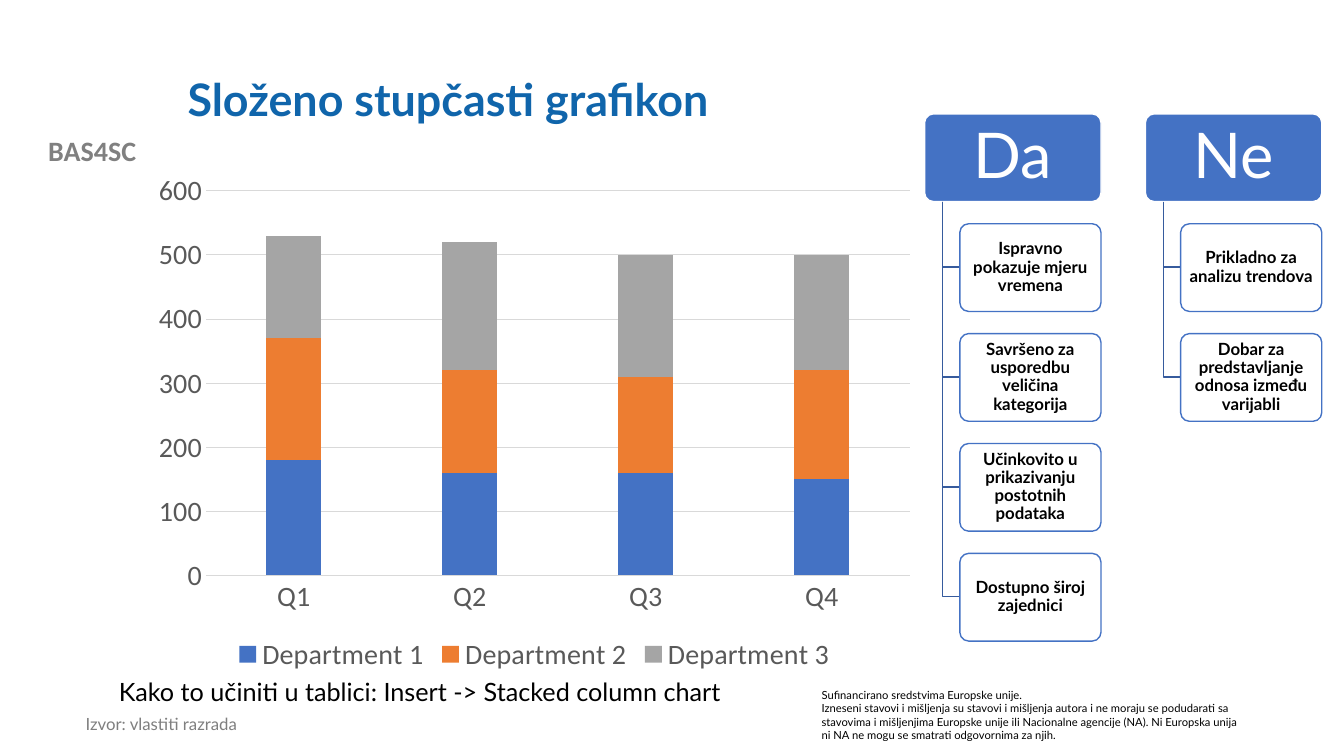
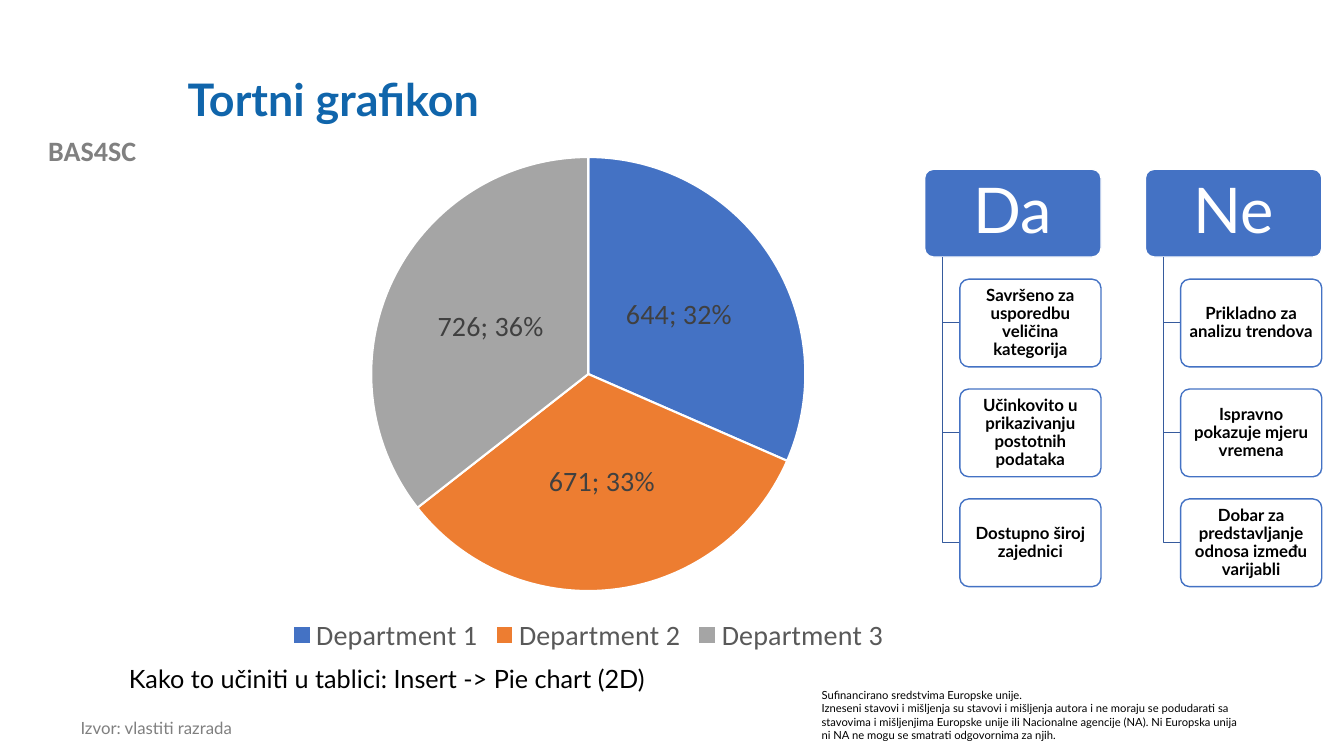
"""Build two slides on stacked column and pie charts, each with a yes/no tree."""
from dataclasses import dataclass

from lxml import etree
from pptx import Presentation
from pptx.chart.data import CategoryChartData
from pptx.dml.color import RGBColor
from pptx.enum.chart import XL_CHART_TYPE as ChartType
from pptx.enum.chart import XL_LABEL_POSITION as LabelPosition
from pptx.enum.chart import XL_LEGEND_POSITION as LegendPosition
from pptx.enum.chart import XL_TICK_MARK as TickMark
from pptx.enum.shapes import MSO_SHAPE as Shape
from pptx.enum.text import MSO_ANCHOR as Anchor
from pptx.enum.text import PP_ALIGN as Align
from pptx.oxml.ns import qn
from pptx.util import Inches, Pt


@dataclass(frozen=True)
class Theme:
    heading: str = "Lato"
    chart_face: str = "Calibri"
    title: str = "1065AB"
    project: str = "808080"
    source: str = "7F7F7F"
    text: str = "000000"
    paper: str = "FFFFFF"
    accent: str = "4472C4"
    branch: str = "365B9D"
    grid: str = "D9D9D9"
    axis_text: str = "595959"
    label_text: str = "404040"
    series: tuple = ("4472C4", "ED7D31", "A5A5A5")
    title_size: int = 32
    header_size: int = 45
    chart_size: int = 20
    note_size: int = 18
    card_size: int = 12
    legal_size: int = 8


THEME = Theme()
DEPARTMENTS = ("Department 1", "Department 2", "Department 3")
TREND = "Prikladno za analizu trendova"
TIME = "Ispravno pokazuje mjeru vremena"
SIZES = "Savršeno za usporedbu veličina kategorija"
PERCENT = "Učinkovito u prikazivanju postotnih podataka"
AUDIENCE = "Dostupno široj zajednici"
RELATION = "Dobar za predstavljanje odnosa između varijabli"
LEGAL = (
    "Sufinancirano sredstvima Europske unije.",
    "Izneseni stavovi i mišljenja su stavovi i mišljenja autora i ne moraju se "
    "podudarati sa stavovima i mišljenjima Europske unije ili Nacionalne agencije "
    "(NA). Ni Europska unija ni NA ne mogu se smatrati odgovornima za njih.",
)


def apply(target, values):
    for name, value in values.items():
        setattr(target, name, value)


def rgb(color):
    return RGBColor.from_string(color)


def set_font(font, size, color, face=THEME.heading, bold=False):
    apply(font, {"size": Pt(size), "name": face, "bold": bold})
    font.color.rgb = rgb(color)


def set_line(line, color, width=1):
    line.color.rgb = rgb(color)
    line.width = Pt(width)


def set_fill(fill, color):
    fill.solid()
    fill.fore_color.rgb = rgb(color)


class Deck:
    def __init__(self, theme):
        self.theme = theme
        self.deck = Presentation()
        apply(self.deck, {"slide_width": Inches(13.33), "slide_height": Inches(7.5)})
        self.page = None

    def add_page(self, title):
        theme = self.theme
        self.page = self.deck.slides.add_slide(self.deck.slide_layouts[5])
        self.text(0, 1.28, 1.83, 0.44, ["BAS4SC"], theme.chart_size, theme.project,
                  face=theme.chart_face, bold=True, align=Align.CENTER)
        self.text(8.05, 6.78, 4.37, 0.64, LEGAL, theme.legal_size, theme.text)
        box = self.page.shapes.title
        apply(box, {"left": Inches(1.76), "top": Inches(0.4),
                    "width": Inches(10.66), "height": Inches(1.22)})
        box.text_frame.vertical_anchor = Anchor.MIDDLE
        self.fill_text(box.text_frame, [title], theme.title_size, theme.title,
                       bold=True, spacing=0.9)

    def fill_text(self, frame, lines, size, color, face=THEME.heading, bold=False,
                  align=Align.LEFT, spacing=1.0):
        frame.word_wrap = True
        frame.text = "\n".join(lines)
        for para in frame.paragraphs:
            apply(para, {"alignment": align, "line_spacing": spacing})
            set_font(para.runs[0].font, size, color, face, bold)

    def text(self, left, top, width, height, lines, size, color, **style):
        box = self.page.shapes.add_textbox(
            Inches(left), Inches(top), Inches(width), Inches(height))
        self.fill_text(box.text_frame, lines, size, color, **style)

    def source(self, left, top):
        self.text(left, top, 5.01, 0.37, ["Izvor: vlastiti razrada"],
                  self.theme.card_size, self.theme.source, spacing=0.9)

    def instruction(self, left, top, command):
        self.text(left, top, 7.88, 0.42, [f"Kako to učiniti u tablici: {command}"],
                  self.theme.note_size, self.theme.text)

    def card(self, left, top, width, label, size, color, fill, outline, inset, bold):
        box = self.page.shapes.add_shape(
            Shape.ROUNDED_RECTANGLE, Inches(left), Inches(top),
            Inches(width), Inches(0.87))
        box.adjustments[0] = 0.1
        box.shadow.inherit = False
        set_fill(box.fill, fill)
        set_line(box.line, outline)
        apply(box.text_frame, {
            "margin_left": Inches(inset), "margin_right": Inches(inset),
            "margin_top": Inches(0.05), "margin_bottom": Inches(0.05),
            "vertical_anchor": Anchor.MIDDLE})
        self.fill_text(box.text_frame, [label], size, color, bold=bold,
                       align=Align.CENTER, spacing=0.9)

    def branch(self, left, top, drop):
        builder = self.page.shapes.build_freeform(Inches(left), Inches(top))
        bottom = Inches(top + drop)
        builder.add_line_segments(
            [(Inches(left), bottom), (Inches(left + 0.17), bottom)], close=False)
        elbow = builder.convert_to_shape()
        elbow.shadow.inherit = False
        elbow.fill.background()
        set_line(elbow.line, self.theme.branch)

    def tree(self, top, columns):
        theme, step = self.theme, 1.09
        for index, (header, reasons) in enumerate(columns.items()):
            left = 9.17 + index * 2.19
            self.card(left, top, 1.75, header, theme.header_size, theme.paper,
                      theme.accent, theme.paper, 0.12, False)
            for row, reason in enumerate(reasons, 1):
                self.branch(left + 0.18, top + 0.87, row * step - 0.44)
                self.card(left + 0.35, top + row * step, 1.4, reason,
                          theme.card_size, theme.text, theme.paper,
                          theme.accent, 0.06, True)

    def chart(self, kind, left, top, width, height, categories, series):
        theme = self.theme
        data = CategoryChartData()
        data.categories = categories
        for name, values in series.items():
            data.add_series(name, values)
        chart = self.page.shapes.add_chart(
            kind, Inches(left), Inches(top), Inches(width), Inches(height), data).chart
        apply(chart, {"has_title": False, "has_legend": True})
        set_font(chart.font, theme.chart_size, theme.text, theme.chart_face)
        apply(chart.legend, {"position": LegendPosition.BOTTOM,
                             "include_in_layout": False})
        set_font(chart.legend.font, theme.chart_size, theme.axis_text, theme.chart_face)
        return chart

    def stacked_chart(self, categories, series):
        theme = self.theme
        chart = self.chart(ChartType.COLUMN_STACKED, 1.42, 1.62, 7.76, 5.1,
                           categories, series)
        plot = chart.plots[0]
        apply(plot, {"gap_width": 219, "overlap": 100, "vary_by_categories": False})
        for bars, color in zip(plot.series, theme.series):
            set_fill(bars.format.fill, color)
        for axis in (chart.category_axis, chart.value_axis):
            apply(axis, {"major_tick_mark": TickMark.NONE,
                         "minor_tick_mark": TickMark.NONE})
            set_font(axis.tick_labels.font, theme.chart_size, theme.axis_text,
                     theme.chart_face)
        set_line(chart.category_axis.format.line, theme.grid, 0.75)
        apply(chart.value_axis, {"minimum_scale": 0, "maximum_scale": 600,
                                 "major_unit": 100, "has_major_gridlines": True})
        chart.value_axis.format.line.fill.background()
        set_line(chart.value_axis.major_gridlines.format.line, theme.grid, 0.75)

    def pie_chart(self, categories, values):
        theme = self.theme
        chart = self.chart(ChartType.PIE, 1.76, 1.42, 8.15, 5.11,
                           categories, {"Series 1": values})
        chart.plots[0].vary_by_categories = True
        pie = chart.plots[0].series[0]
        for index, color in enumerate(theme.series):
            piece = pie.points[index].format
            set_fill(piece.fill, color)
            set_line(piece.line, theme.paper, 1.5)
        labels = pie.data_labels
        apply(labels, {"show_value": True, "show_percentage": True,
                       "position": LabelPosition.CENTER})
        set_font(labels.font, theme.chart_size, theme.label_text, theme.chart_face)
        separator = etree.Element(qn("c:separator"))
        separator.text = "; "
        labels._element.find(qn("c:showBubbleSize")).addnext(separator)


def main():
    show = Deck(THEME)

    show.add_page("Složeno stupčasti grafikon")
    show.source(0.75, 7.05)
    show.stacked_chart(
        ("Q1", "Q2", "Q3", "Q4"),
        dict(zip(DEPARTMENTS, ((180, 160, 160, 150), (190, 160, 150, 170),
                               (160, 200, 190, 180)))))
    show.tree(1.13, {"Da": (TIME, SIZES, PERCENT, AUDIENCE), "Ne": (TREND, RELATION)})
    show.instruction(1.08, 6.66, "Insert -> Stacked column chart")

    show.add_page("Tortni grafikon")
    show.source(0.7, 7.09)
    show.pie_chart(DEPARTMENTS, (644, 671, 726))
    show.tree(1.68, {"Da": (SIZES, PERCENT, AUDIENCE), "Ne": (TREND, TIME, RELATION)})
    show.instruction(1.18, 6.53, "Insert -> Pie chart (2D)")

    show.deck.save("out.pptx")


if __name__ == "__main__":
    main()
